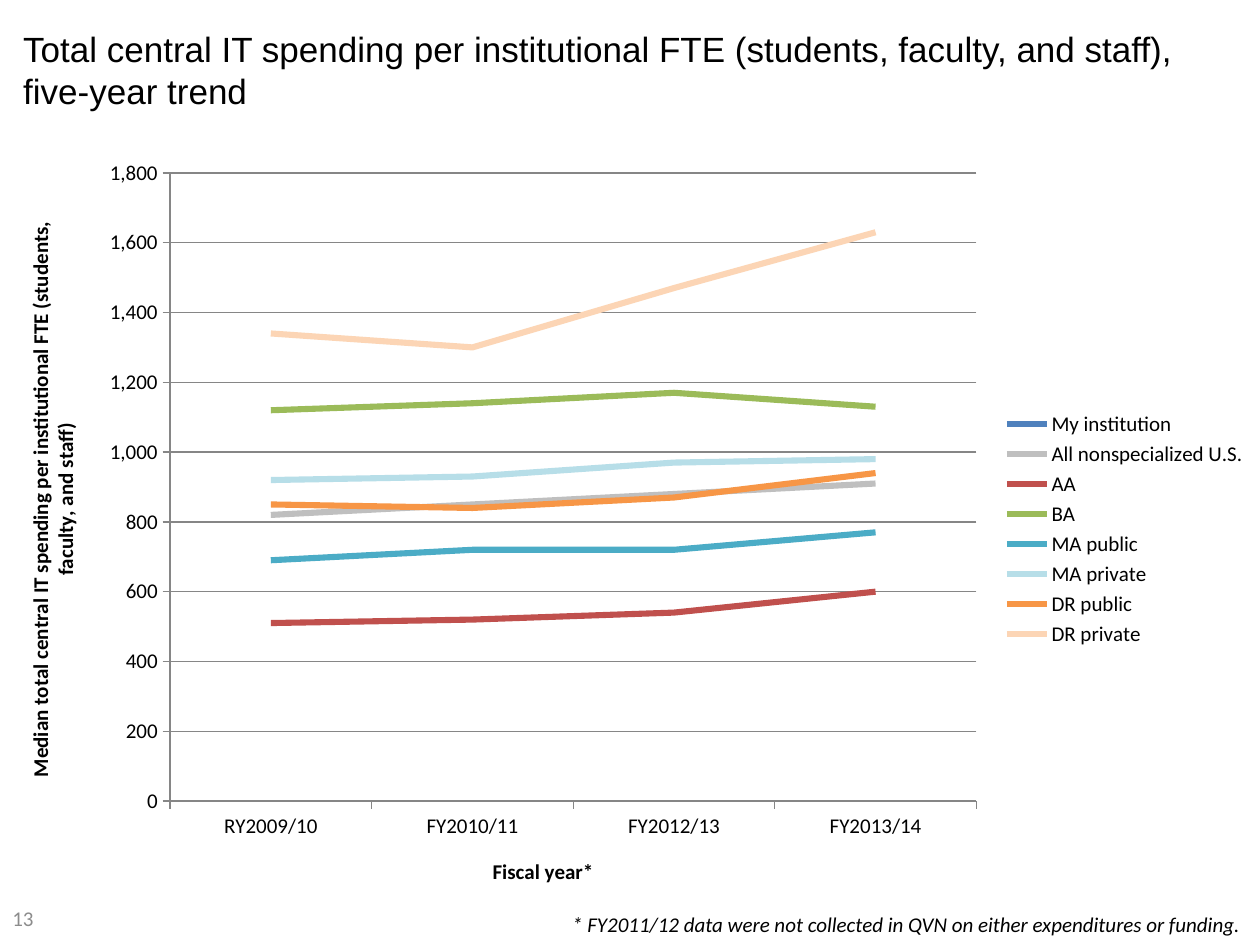
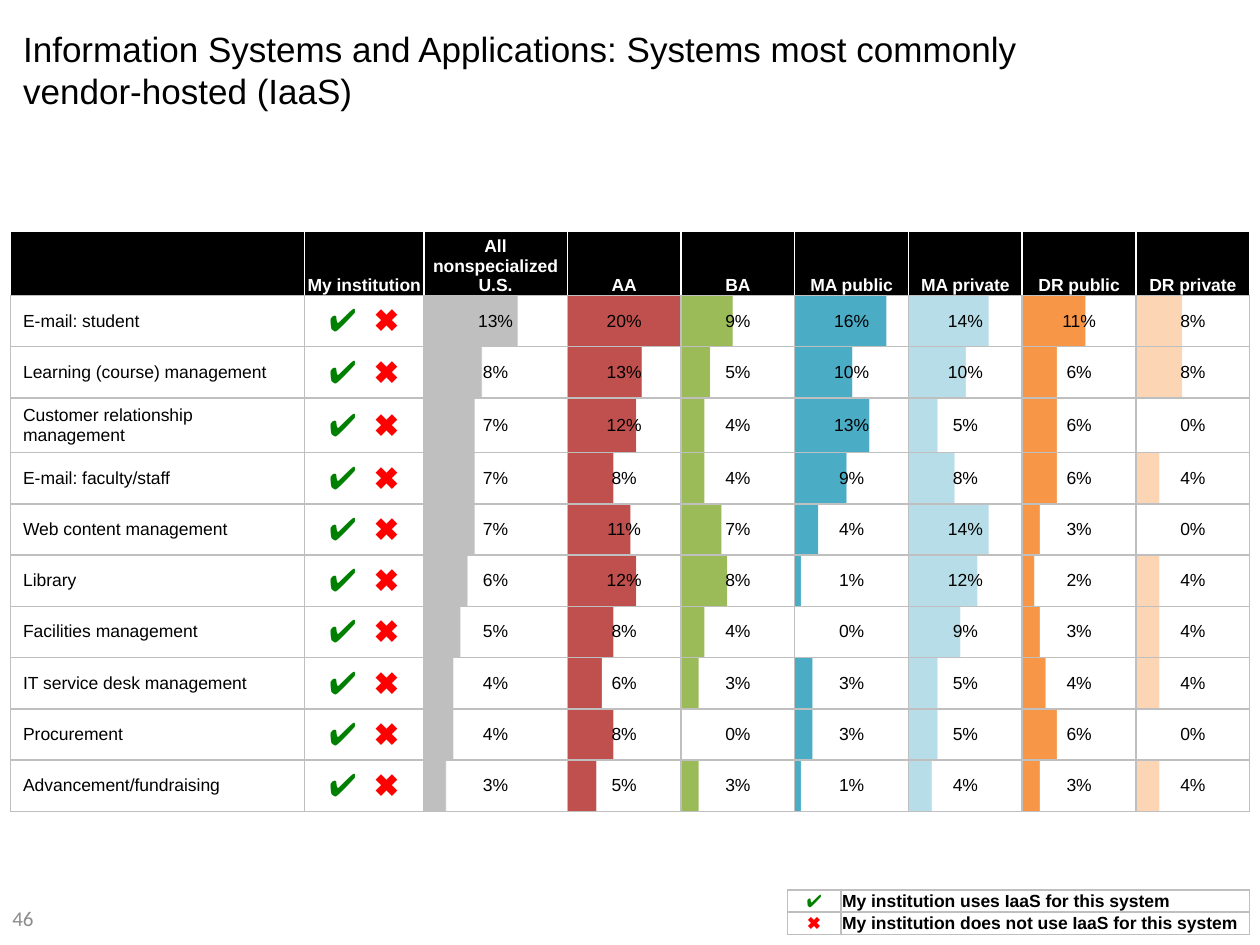
from dataclasses import dataclass

from lxml.etree import SubElement
from pptx import Presentation
from pptx.chart.data import CategoryChartData
from pptx.dml.color import RGBColor
from pptx.enum.chart import XL_CHART_TYPE, XL_LEGEND_POSITION, XL_TICK_MARK
from pptx.enum.text import MSO_ANCHOR, PP_ALIGN
from pptx.oxml import parse_xml
from pptx.oxml.ns import nsdecls, qn
from pptx.util import Pt


@dataclass(frozen=True)
class Theme:
    black: str = "000000"
    white: str = "FFFFFF"
    border: str = "BFBFBF"
    axis: str = "868686"
    number: str = "8C8C8C"
    yes: str = "008000"
    no: str = "FF0000"
    heading_font: str = "Arial"
    body_font: str = "Calibri"
    title: float = 20
    body: float = 12
    table: float = 10
    mark: float = 18


THEME = Theme()

GROUPS = {
    "My institution": "4F81BD",
    "All nonspecialized U.S.": "BFBFBF",
    "AA": "C0504D",
    "BA": "9BBB59",
    "MA public": "4BACC6",
    "MA private": "B7DEE8",
    "DR public": "F79646",
    "DR private": "FCD5B5",
}

SPENDING = {
    "title": ("Total central IT spending per institutional FTE (students, faculty, and staff), ",
              "five-year trend"),
    "number": "13",
    "years": ("RY2009/10", "FY2010/11", "FY2012/13", "FY2013/14"),
    "year_title": "Fiscal year*",
    "amount_title": "Median total central IT spending per institutional FTE (students, faculty, and staff)",
    "medians": (
        (None, None, None, None),
        (820, 850, 880, 910),
        (510, 520, 540, 600),
        (1120, 1140, 1170, 1130),
        (690, 720, 720, 770),
        (920, 930, 970, 980),
        (850, 840, 870, 940),
        (1340, 1300, 1470, 1630),
    ),
    "footnote": "* FY2011/12 data were not collected in QVN on either expenditures or funding.",
}

HOSTING = {
    "title": ("Information Systems and Applications: Systems most commonly ",
              "vendor-hosted (IaaS)"),
    "number": "46",
    "systems": (
        ("E-mail: student", (13, 20, 9, 16, 14, 11, 8)),
        ("Learning (course) management", (8, 13, 5, 10, 10, 6, 8)),
        ("Customer relationship management", (7, 12, 4, 13, 5, 6, 0)),
        ("E-mail: faculty/staff", (7, 8, 4, 9, 8, 6, 4)),
        ("Web content management", (7, 11, 7, 4, 14, 3, 0)),
        ("Library", (6, 12, 8, 1, 12, 2, 4)),
        ("Facilities management", (5, 8, 4, 0, 9, 3, 4)),
        ("IT service desk management", (4, 6, 3, 3, 5, 4, 4)),
        ("Procurement", (4, 8, 0, 3, 5, 6, 0)),
        ("Advancement/fundraising", (3, 5, 3, 1, 4, 3, 4)),
    ),
    "key": (
        ("✔", THEME.yes, "My institution uses IaaS for this system"),
        ("✖", THEME.no, "My institution does not use IaaS for this system"),
    ),
}
FULL_BAR_PERCENT = 20
SYSTEM_COLUMNS = [168, 68.2, 82] + [65] * 6
SYSTEM_ROWS = [29.3] * (1 + len(HOSTING["systems"]))
CELL_INSETS = (7.2, 3.6, 7.2, 3.6)
HEADER_INSETS = (0, 0.7, 0, 0)
KEY_INSETS = (0.7, 0.7, 0.7, 0)


def rgb(value):
    return RGBColor.from_string(value)


def format_font(font, size, color, family, bold=False, italic=False):
    font.size, font.name = Pt(size), family
    font.bold, font.italic = bold, italic
    font.color.rgb = rgb(color)


def write(frame, text, size=THEME.body, color=THEME.black, family=THEME.body_font,
          bold=False, italic=False, align=PP_ALIGN.LEFT, spacing=0, new=True):
    paragraph = frame.paragraphs[0]
    paragraph.alignment = align
    if not new:
        paragraph.add_line_break()
    run = paragraph.add_run()
    run.text = text
    format_font(run.font, size, color, family, bold, italic)
    if spacing:
        run.font._element.set("spc", str(spacing * 100))


def add_note(slide, text, left, top, width, height, anchor=MSO_ANCHOR.TOP, **style):
    frame = slide.shapes.add_textbox(Pt(left), Pt(top), Pt(width), Pt(height)).text_frame
    frame.word_wrap = True
    frame.vertical_anchor = anchor
    write(frame, text, **style)


def start_slide(deck, content, title_width):
    slide = deck.slides.add_slide(deck.slide_layouts[5])
    title = slide.shapes.title
    title.left, title.top, title.width, title.height = Pt(6), Pt(12), Pt(title_width), Pt(72)
    title.text_frame.vertical_anchor = MSO_ANCHOR.TOP
    for index, line in enumerate(content["title"]):
        write(title.text_frame, line, size=THEME.title, family=THEME.heading_font, new=index == 0)
    add_note(slide, content["number"], 0, 509.5, 78, 30, MSO_ANCHOR.MIDDLE, color=THEME.number)
    return slide


def format_axis(axis, title):
    axis.has_title = True
    frame = axis.axis_title.text_frame
    write(frame, title, bold=True, align=PP_ALIGN.CENTER)
    axis.major_tick_mark = XL_TICK_MARK.OUTSIDE
    axis.format.line.color.rgb = rgb(THEME.axis)
    axis.format.line.width = Pt(0.75)


def place_plot(chart, x, y, w, h):
    plot_area = chart._chartSpace.chart.plotArea
    for old in plot_area.findall(qn("c:layout")):
        plot_area.remove(old)
    layout = parse_xml(f"<c:layout {nsdecls('c')}><c:manualLayout/></c:layout>")
    settings = {"layoutTarget": "inner", "xMode": "edge", "yMode": "edge",
                "x": x, "y": y, "w": w, "h": h}
    for tag, value in settings.items():
        SubElement(layout[0], qn(f"c:{tag}")).set("val", str(value))
    plot_area.insert(0, layout)


def add_spending_chart(slide):
    data = CategoryChartData(number_format="#,##0")
    data.categories = SPENDING["years"]
    for group, medians in zip(GROUPS, SPENDING["medians"]):
        data.add_series(group, medians)
    chart = slide.shapes.add_chart(XL_CHART_TYPE.LINE, Pt(0), Pt(83.5), Pt(720), Pt(437.8), data).chart
    format_font(chart.font, THEME.body, THEME.black, THEME.body_font)
    chart.has_title = False
    chart.has_legend = True
    chart.legend.position = XL_LEGEND_POSITION.RIGHT
    chart.legend.include_in_layout = False
    chart.plots[0].vary_by_categories = False
    for line, color in zip(chart.plots[0].series, GROUPS.values()):
        line.smooth = False
        line.format.line.color.rgb = rgb(color)
        line.format.line.width = Pt(3.5)
    amounts = chart.value_axis
    format_axis(chart.category_axis, SPENDING["year_title"])
    format_axis(amounts, SPENDING["amount_title"])
    amounts.minimum_scale, amounts.maximum_scale, amounts.major_unit = 0, 1800, 200
    amounts.tick_labels.number_format = "#,##0"
    amounts.tick_labels.number_format_is_linked = False
    amounts.has_major_gridlines = True
    amounts.major_gridlines.format.line.color.rgb = rgb(THEME.axis)
    amounts.major_gridlines.format.line.width = Pt(0.75)
    place_plot(chart, 0.135, 0.035, 0.64, 0.82)


def add_grid(slide, left, top, columns, rows):
    table = slide.shapes.add_table(len(rows), len(columns), Pt(left), Pt(top),
                                   Pt(sum(columns)), Pt(sum(rows))).table
    table.first_row = table.horz_banding = False
    for column, width in zip(table.columns, columns):
        column.width = Pt(width)
    for row, height in zip(table.rows, rows):
        row.height = Pt(height)
    return table


def format_cell(cell, insets=CELL_INSETS, fill=THEME.white, edge=THEME.border, anchor=MSO_ANCHOR.MIDDLE):
    cell.margin_left, cell.margin_top, cell.margin_right, cell.margin_bottom = map(Pt, insets)
    cell.vertical_anchor = anchor
    properties = cell._tc.get_or_add_tcPr()
    for side, color in zip("LRTB", (edge, edge, edge, THEME.border)):
        properties.append(parse_xml(
            f'<a:ln{side} {nsdecls("a")} w="{Pt(1)}"><a:solidFill><a:srgbClr val="{color}"/>'
            f"</a:solidFill></a:ln{side}>"))
    cell.fill.solid()
    cell.fill.fore_color.rgb = rgb(fill)


def fill_bar(cell, percent, color):
    share = percent / FULL_BAR_PERCENT
    if share >= 1:
        cell.fill.fore_color.rgb = rgb(color)
    elif share > 0:
        cell.fill.gradient()
        cell.fill.gradient_angle = 0
        stops = ((share, color), (share + 0.01, THEME.white))
        for stop, (position, shade) in zip(cell.fill.gradient_stops, stops):
            stop.position = round(position, 2)
            stop.color.rgb = rgb(shade)


def add_system_table(slide):
    table = add_grid(slide, 6, 132, SYSTEM_COLUMNS, SYSTEM_ROWS)
    words = dict(size=THEME.table, family=THEME.heading_font)
    centred = dict(words, align=PP_ALIGN.CENTER)
    marks = dict(centred, size=THEME.mark)
    for column, heading in enumerate(("", *GROUPS)):
        cell = table.cell(0, column)
        format_cell(cell, HEADER_INSETS, THEME.black, THEME.white, MSO_ANCHOR.BOTTOM)
        if heading:
            write(cell.text_frame, heading, color=THEME.white, bold=True, **centred)
    peer_colors = list(GROUPS.values())[1:]
    for row, (system, percents) in enumerate(HOSTING["systems"], 1):
        name, mine, *peers = table.rows[row].cells
        for cell in (name, mine, *peers):
            format_cell(cell)
        write(name.text_frame, system, **words)
        write(mine.text_frame, "✔", color=THEME.yes, **marks)
        write(mine.text_frame, " ", spacing=5, **marks)
        write(mine.text_frame, "✖", color=THEME.no, **marks)
        for cell, percent, color in zip(peers, percents, peer_colors):
            write(cell.text_frame, f"{percent}%", **centred)
            fill_bar(cell, percent, color)


def add_key(slide):
    table = add_grid(slide, 450, 508.5, (30.5, 233.5), (3, 3))
    for row, (mark, color, meaning) in enumerate(HOSTING["key"]):
        mark_cell, meaning_cell = table.rows[row].cells
        for cell in (mark_cell, meaning_cell):
            format_cell(cell, KEY_INSETS)
        write(mark_cell.text_frame, mark, size=THEME.table, color=color,
              family=THEME.heading_font, align=PP_ALIGN.CENTER)
        write(meaning_cell.text_frame, meaning, size=THEME.table,
              family=THEME.heading_font, bold=True)


def main():
    deck = Presentation()
    deck.slide_width, deck.slide_height = Pt(720), Pt(540)
    spending = start_slide(deck, SPENDING, 702)
    add_spending_chart(spending)
    add_note(spending, SPENDING["footnote"], 32, 517.2, 684, 21.6, italic=True, align=PP_ALIGN.RIGHT)
    hosting = start_slide(deck, HOSTING, 673)
    add_system_table(hosting)
    add_key(hosting)
    deck.save("out.pptx")


if __name__ == "__main__":
    main()
